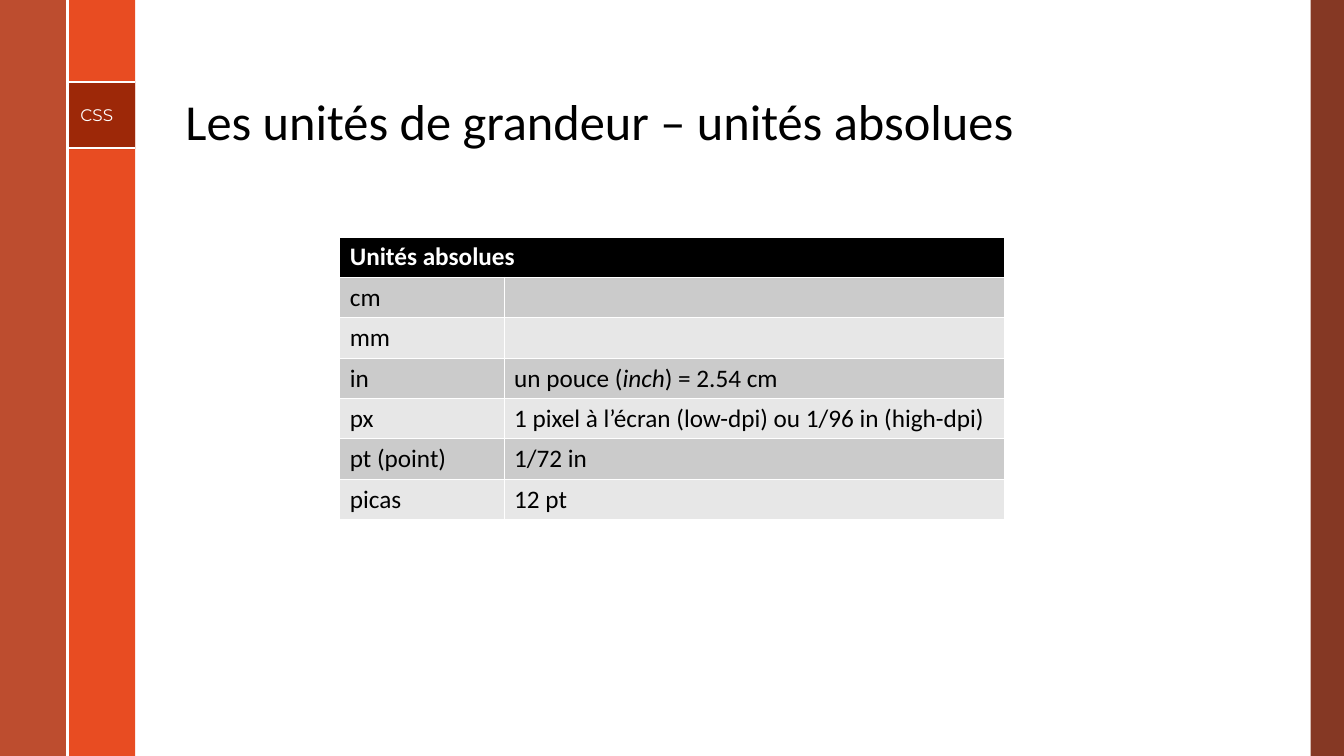
from lxml.etree import SubElement
from pptx import Presentation
from pptx.dml.color import RGBColor
from pptx.enum.shapes import MSO_CONNECTOR, MSO_SHAPE
from pptx.enum.text import MSO_ANCHOR
from pptx.oxml.ns import qn
from pptx.util import Inches, Pt

WHITE = RGBColor(0xFF, 0xFF, 0xFF)
BLACK = RGBColor(0x00, 0x00, 0x00)
ORANGE = RGBColor(0xE8, 0x4C, 0x22)
RUST = RGBColor(0xB5, 0x35, 0x13)
BROWN = RGBColor(0x78, 0x23, 0x0D)
DARK_RED = RGBColor(0x85, 0x1D, 0x00)
GREY = RGBColor(0xCB, 0xCB, 0xCB)
LIGHT_GREY = RGBColor(0xE7, 0xE7, 0xE7)


def add_span(para, text, size, color, font="Calibri", bold=False, italic=False):
    span = para.add_run()
    span.text = text
    span.font.name = font
    span.font.size = Pt(size)
    span.font.color.rgb = color
    span.font.bold = bold
    span.font.italic = italic


def add_textbox(left, top, width, height):
    box = page.shapes.add_textbox(Inches(left), Inches(top), Inches(width), Inches(height))
    box.text_frame.word_wrap = True
    return box.text_frame


deck = Presentation()
deck.slide_width = Inches(13.33)
deck.slide_height = Inches(7.5)
page = deck.slides.add_slide(deck.slide_layouts[6])

# Side bands and label square: left, top, width, height, colour, opacity in percent
bands = [
    (13, 0, 0.33, 7.5, BROWN, 90),
    (0.67, 0, 0.67, 7.5, ORANGE, 100),
    (0, 0, 0.67, 7.5, RUST, 88),
    (0.67, 0.81, 0.67, 0.67, DARK_RED, 75),
]
for left, top, width, height, color, opacity in bands:
    band = page.shapes.add_shape(
        MSO_SHAPE.RECTANGLE, Inches(left), Inches(top), Inches(width), Inches(height))
    band.shadow.inherit = False
    band.line.fill.background()
    band.fill.solid()
    band.fill.fore_color.rgb = color
    if opacity < 100:
        tint = band.fill._xPr.find(".//" + qn("a:srgbClr"))
        SubElement(tint, qn("a:alpha"), val=str(opacity * 1000))

# White rules around the label square
for x1, y1, x2, y2 in [(0.67, 0.81, 1.34, 0.81), (0.67, 1.47, 1.34, 1.47), (0.67, 0, 0.67, 7.5)]:
    rule = page.shapes.add_connector(
        MSO_CONNECTOR.STRAIGHT, Inches(x1), Inches(y1), Inches(x2), Inches(y2))
    rule.line.color.rgb = WHITE
    rule.line.width = Pt(1.5)
    SubElement(rule._element.spPr, qn("a:effectLst"))

# Section label
label = add_textbox(0.7, 0.99, 0.64, 0.31)
add_span(label.paragraphs[0], "CSS", 12, WHITE, font="Montserrat")

# Title
title = add_textbox(1.74, 0.19, 10.7, 1.36)
title.vertical_anchor = MSO_ANCHOR.BOTTOM
title.paragraphs[0].line_spacing = 0.9
add_span(title.paragraphs[0], "Les unités de grandeur – unités absolues", 36, BLACK)

# Table of units: each cell is a list of (text, italic) pieces
rows = [
    ([("Unités absolues", False)], []),
    ([("cm", False)], []),
    ([("mm", False)], []),
    ([("in", False)], [("un pouce (", False), ("inch", True), (") = 2.54 cm", False)]),
    ([("px", False)], [("1 pixel à l’écran (low-dpi) ou 1/96 in (high-dpi)", False)]),
    ([("pt (point)", False)], [("1/72 in", False)]),
    ([("picas", False)], [("12 pt", False)]),
]
table = page.shapes.add_table(
    len(rows), 2, Inches(3.37), Inches(2.35), Inches(6.59), Inches(2.8)).table
table.columns[0].width = Inches(1.63)
table.columns[1].width = Inches(4.96)
table.cell(0, 0).merge(table.cell(0, 1))

for r, row in enumerate(rows):
    header = r == 0
    for c, pieces in enumerate(row):
        cell = table.cell(r, c)
        # Borders go before the fill
        properties = cell._tc.get_or_add_tcPr()
        for side in ("a:lnL", "a:lnR", "a:lnT", "a:lnB"):
            border = SubElement(properties, qn(side), w=str(Pt(0.6)))
            SubElement(SubElement(border, qn("a:solidFill")), qn("a:srgbClr"), val=str(WHITE))
        cell.fill.solid()
        cell.fill.fore_color.rgb = BLACK if header else GREY if r % 2 else LIGHT_GREY
        for text, italic in pieces:
            add_span(cell.text_frame.paragraphs[0], text, 18,
                     WHITE if header else BLACK, bold=header, italic=italic)

deck.save("out.pptx")
